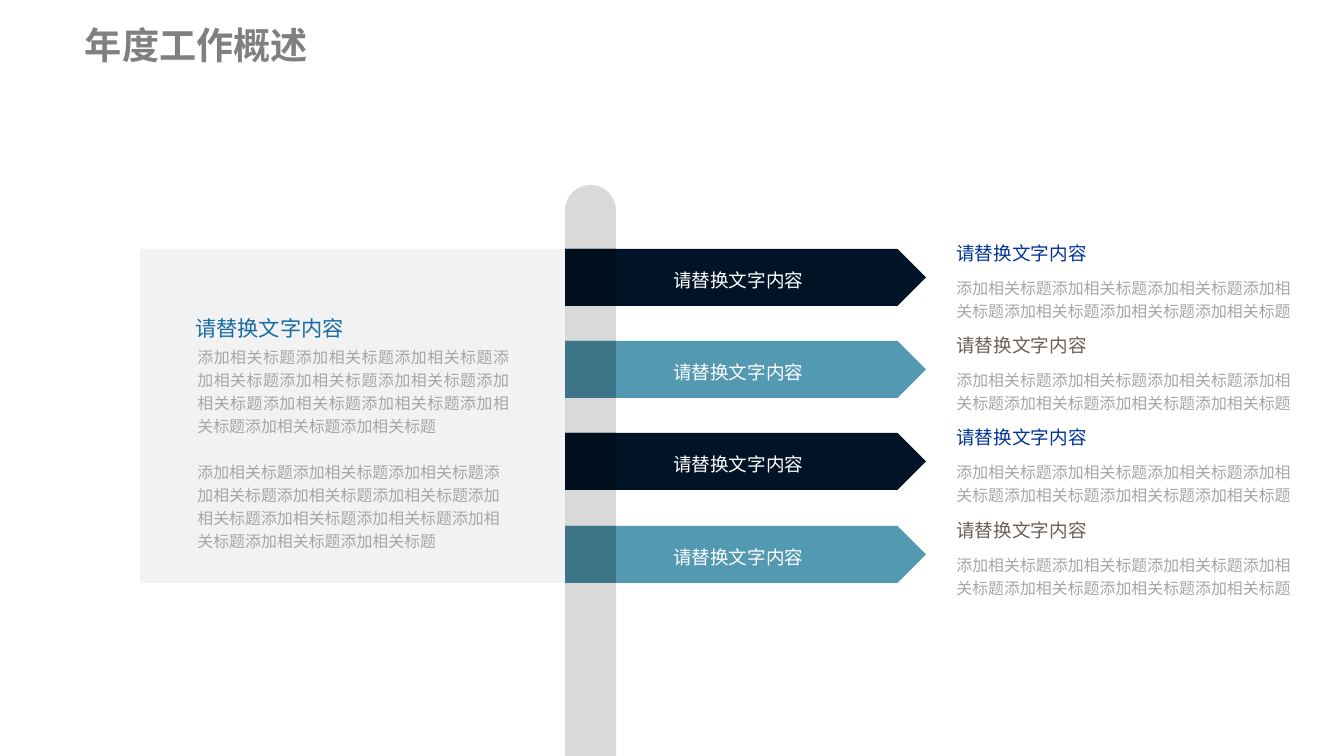
"""Build the annual work overview slide: a signpost with four arrows and notes."""
from pptx import Presentation
from pptx import util as u
from pptx.dml.color import RGBColor
from pptx.enum import shapes, text

NAVY = RGBColor(0x01, 0x13, 0x27)
NAVY_SHADE = RGBColor(0x01, 0x0E, 0x1D)
TEAL = RGBColor(0x53, 0x99, 0xB2)
TEAL_SHADE = RGBColor(0x3D, 0x74, 0x87)
POLE_GRAY = RGBColor(0xD9, 0xD9, 0xD9)
PANEL_GRAY = RGBColor(0xF2, 0xF2, 0xF2)
BODY_GRAY = RGBColor(0xA6, 0xA6, 0xA6)
TITLE_GRAY = RGBColor(0x80, 0x80, 0x80)
WHITE = RGBColor(0xFF, 0xFF, 0xFF)
BLUE = RGBColor(0x00, 0x33, 0x99)
BROWN = RGBColor(0x6C, 0x5F, 0x57)
PANEL_BLUE = RGBColor(0x16, 0x6C, 0xA3)

TITLE = "年度工作概述"
HEADING = "请替换文字内容"
PHRASE = "添加相关标题"
NOTE = PHRASE * 7
PANEL_HEADING = HEADING
PANEL_BODIES = [
    (PHRASE * 12, text.PP_ALIGN.JUSTIFY),
    (PHRASE * 12, text.PP_ALIGN.LEFT),
]
ROWS = [
    (HEADING, HEADING, NOTE, NAVY, NAVY_SHADE, BLUE),
    (HEADING, HEADING, NOTE, TEAL, TEAL_SHADE, BROWN),
    (HEADING, HEADING, NOTE, NAVY, NAVY_SHADE, BLUE),
    (HEADING, HEADING, NOTE, TEAL, TEAL_SHADE, BROWN),
]

PX = 9565
SLIDE_WIDTH, SLIDE_HEIGHT = 1344, 756
POLE_LEFT, POLE_TOP, POLE_WIDTH = 565, 185, 51
ROW_TOP, ROW_HEIGHT, ROWS_SPAN = 249, 57, 277
ARROW_WIDTH = 361
NOTE_LEFT, NOTE_WIDTH = 947, 361
PANEL_LEFT = 140
BODY_TOP, BODY_PITCH = 339, 115


def emu(*lengths):
    return [u.Emu(length * PX) for length in lengths]


def add_block(slide, kind, box, color):
    shape = slide.shapes.add_shape(kind, *emu(*box))
    shape.shadow.inherit = False
    shape.fill.solid()
    shape.fill.fore_color.rgb = color
    shape.line.fill.background()
    return shape


def write(shape, words, size, color, align=text.PP_ALIGN.LEFT, spacing=1.2,
          bold=False, wrap=True, anchor=text.MSO_ANCHOR.TOP):
    frame = shape.text_frame
    frame.word_wrap = wrap
    frame.vertical_anchor = anchor
    paragraph = frame.paragraphs[0]
    paragraph.text = words
    paragraph.alignment = align
    paragraph.line_spacing = spacing
    font = paragraph.font
    font.name, font.size, font.bold = "Arial", u.Pt(size), bold
    font.color.rgb = color


def add_label(slide, box, words, **style):
    label = slide.shapes.add_textbox(*emu(*box))
    write(label, words, **style)
    return label


def add_row(slide, index, row):
    label, heading, note, color, shade, heading_color = row
    top = ROW_TOP + index * ROWS_SPAN // (len(ROWS) - 1)
    arrow = add_block(slide, shapes.MSO_SHAPE.PENTAGON,
                      (POLE_LEFT, top, ARROW_WIDTH, ROW_HEIGHT), color)
    write(arrow, label, size=14, color=WHITE, align=text.PP_ALIGN.CENTER,
          anchor=text.MSO_ANCHOR.MIDDLE)
    add_block(slide, shapes.MSO_SHAPE.RECTANGLE,
              (POLE_LEFT, top, POLE_WIDTH, ROW_HEIGHT), shade)
    add_label(slide, (NOTE_LEFT, top - 16, 151, 34), heading,
              size=14, color=heading_color, wrap=False)
    add_label(slide, (NOTE_LEFT, top + 21, NOTE_WIDTH, 56), note,
              size=12, color=BODY_GRAY)


def add_panel(slide):
    add_block(slide, shapes.MSO_SHAPE.RECTANGLE,
              (PANEL_LEFT, ROW_TOP, POLE_LEFT - PANEL_LEFT, ROWS_SPAN + ROW_HEIGHT),
              PANEL_GRAY)
    add_label(slide, (186, 306, 192, 38), PANEL_HEADING, size=16, color=PANEL_BLUE)
    for index, (body, align) in enumerate(PANEL_BODIES):
        add_label(slide, (188, BODY_TOP + index * BODY_PITCH, 331, 102), body,
                  size=12, color=BODY_GRAY, align=align)


def add_title(slide):
    title = add_label(slide, (85, 21, 242, 47), TITLE, size=28, color=TITLE_GRAY,
                      spacing=1.0, bold=True, anchor=text.MSO_ANCHOR.MIDDLE)
    frame = title.text_frame
    frame.margin_left = frame.margin_right = 0
    frame.margin_top = frame.margin_bottom = 0


def main():
    presentation = Presentation()
    presentation.slide_width, presentation.slide_height = emu(SLIDE_WIDTH, SLIDE_HEIGHT)
    slide = presentation.slides.add_slide(presentation.slide_layouts[6])
    pole = add_block(slide, shapes.MSO_SHAPE.ROUND_2_SAME_RECTANGLE,
                     (POLE_LEFT, POLE_TOP, POLE_WIDTH, SLIDE_HEIGHT - POLE_TOP), POLE_GRAY)
    pole.adjustments[0] = 0.5
    for index, row in enumerate(ROWS):
        add_row(slide, index, row)
    add_panel(slide)
    add_title(slide)
    presentation.save("out.pptx")


if __name__ == "__main__":
    main()
